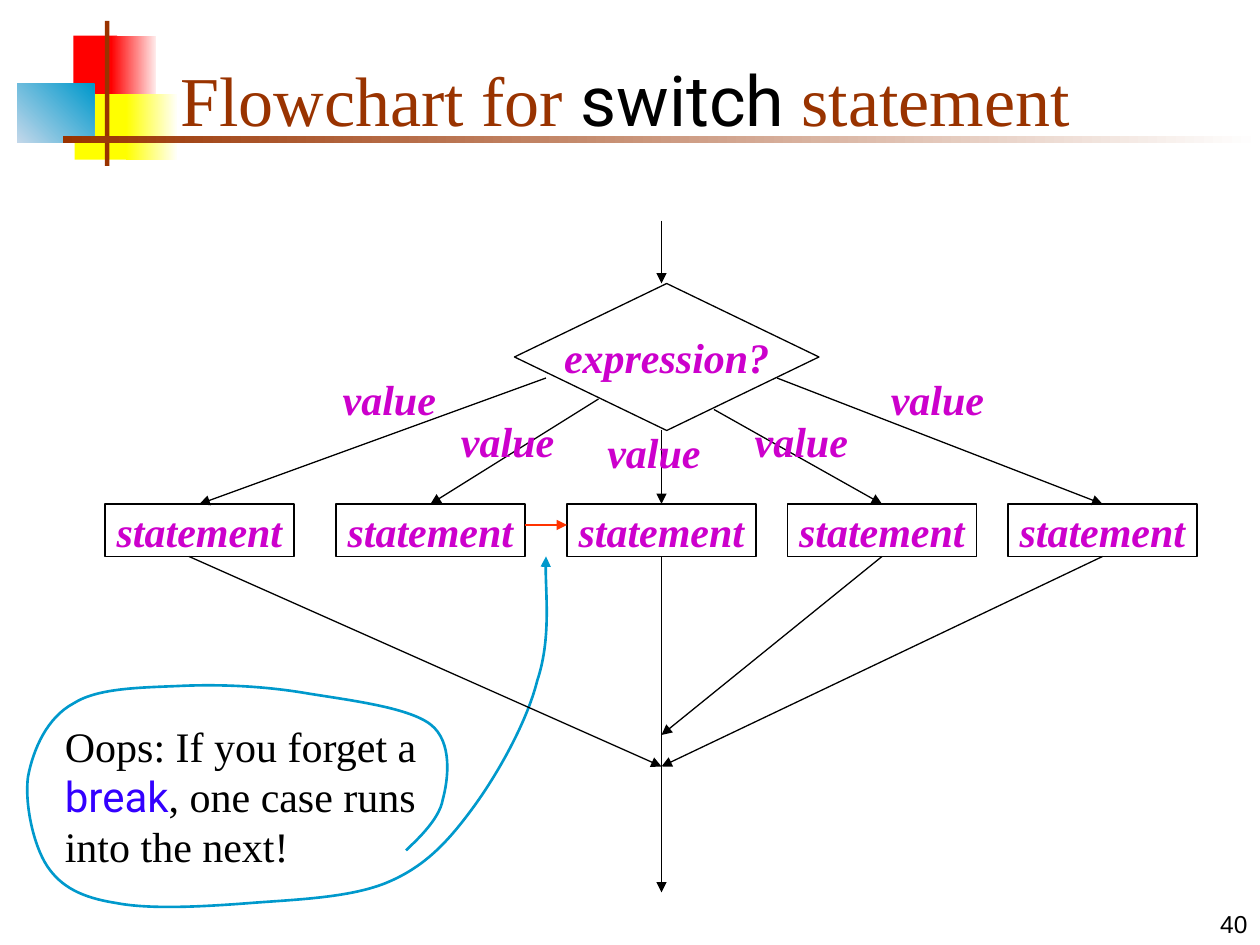
"""Build a slide with the flowchart of a switch statement."""
from dataclasses import dataclass

from lxml import etree
from pptx import Presentation
from pptx.dml.color import RGBColor
from pptx.enum import shapes, text
from pptx.oxml.ns import qn
from pptx.util import Pt


@dataclass(frozen=True)
class Theme:
    serif: str = "Times New Roman"
    code: str = "Roboto"
    sans: str = "Arial"
    title: str = "993300"
    ink: str = "000000"
    label: str = "CC00CC"
    keyword: str = "3300FF"
    fall_through: str = "FF3300"
    callout: str = "0099CC"
    title_size: int = 40
    body_size: int = 24
    number_size: int = 14
    thin: float = 0.75
    thick: float = 1.5


T = Theme()

TITLE = [("Flowchart for ", T.serif, T.title), ("switch", T.code, T.ink),
         (" statement", T.serif, T.title)]
WARNING = [("Oops: If you forget a ", T.serif, T.ink), ("break", T.code, T.keyword),
           (", one case runs into the next!", T.serif, T.ink)]
NUMBER = [("40", T.sans, T.ink)]
CONDITION, STATEMENT, VALUE = ([(word, T.serif, T.label)]
                               for word in ("expression?", "statement", "value"))

ORNAMENTS = [
    ((42, 20.3, 25, 37.5), ["FF0000"], 0),
    ((63.5, 20.3, 25.6, 37.5), ["FF0000", "FFEAEA"], 0),
    ((42.7, 53.8, 33, 37.5), ["FFFF00"], 0),
    ((72, 53.8, 29, 37.5), ["FFFF00", "FFFFF8"], 0),
    ((9.8, 48, 44, 33.5), ["C4D8EA", "0099CC"], 45),
    ((60, 12, 2.5, 82.8), [T.title], 0),
    ((36, 78, 684, 3.75), [T.title, "FFFFFF"], 0),
]

AXIS = 378
BOX_WIDTH, BOX_HEIGHT, BOX_TOP = 108, 30, 288
BOX_BOTTOM = BOX_TOP + BOX_HEIGHT
DIAMOND = (294, 162, 174, 84)
VALUE_WIDTH, VALUE_HEIGHT = 73.4, 36
CASES = [
    {"left": 60, "branch": (312, 216), "value": (185.8, 210)},
    {"left": 192, "branch": (342, 228), "value": (253.4, 234)},
    {"left": 324, "branch": (AXIS, 246), "value": (337, 240), "exit": 510},
    {"left": 450, "branch": (408, 234), "value": (421.2, 234), "exit": 420},
    {"left": 576, "branch": (444, 216), "value": (499, 210), "exit": 438},
]

LOOP_START = (232.5, 486.5)
LOOP_CURVES = [
    [(236.2, 481.7), (251.3, 469.4), (253.4, 457.2)],
    [(255.6, 445.7), (259.2, 424.1), (246.2, 414)],
    [(232.6, 403.9), (198, 399.6), (174.2, 396)],
    [(150.5, 392.4), (124.6, 391), (103, 392.4)],
    [(80.6, 393.1), (56.2, 393.1), (41.8, 401.8)],
    [(27.4, 410.4), (18.7, 428.4), (16.2, 443.5)],
    [(13.7, 459.4), (18.7, 483.1), (26.6, 494.6)],
    [(35.3, 506.9), (46.8, 512.6), (66.2, 516.2)],
    [(85.7, 519.8), (118.1, 517.7), (144, 516.2)],
    [(169.9, 514.1), (200.9, 512.6), (221.8, 504)],
    [(243.4, 495.4), (255.6, 481), (270, 462.2)],
    [(284.4, 442.8), (301, 412.6), (307.4, 388.8)],
    [(314.6, 365), (311, 332.6), (311.8, 318)],
]


def rgb(code):
    return RGBColor.from_string(code)


def points(values):
    return [Pt(value) for value in values]


def write(shape, runs, *, size=T.body_size, align="LEFT", anchor="TOP", wrap=True, strong=None):
    frame = shape.text_frame
    frame.auto_size = text.MSO_AUTO_SIZE.NONE
    frame.word_wrap = wrap
    frame.vertical_anchor = getattr(text.MSO_ANCHOR, anchor)
    paragraph = frame.paragraphs[0]
    paragraph.alignment = getattr(text.PP_ALIGN, align)
    for words, face, color in runs:
        run = paragraph.add_run()
        run.text = words
        font = run.font
        font.name, font.size, font.color.rgb = face, Pt(size), rgb(color)
        font.bold = font.italic = strong


def add_text(slide, box, runs, **style):
    write(slide.shapes.add_textbox(*points(box)), runs, **style)


def add_ornament(slide, box, colors, angle):
    ornament = slide.shapes.add_shape(shapes.MSO_SHAPE.RECTANGLE, *points(box))
    ornament.shadow.inherit = False
    ornament.line.fill.background()
    if len(colors) == 1:
        ornament.fill.solid()
        ornament.fill.fore_color.rgb = rgb(colors[0])
    else:
        ornament.fill.gradient()
        ornament.fill.gradient_angle = angle
        for stop, color in zip(ornament.fill.gradient_stops, colors):
            stop.color.rgb = rgb(color)


def outline(shape, color=T.ink, width=T.thin):
    shape.shadow.inherit = False
    shape.fill.background()
    shape.line.color.rgb = rgb(color)
    shape.line.width = Pt(width)


def add_node(slide, kind, box, runs):
    node = slide.shapes.add_shape(kind, *points(box))
    outline(node)
    write(node, runs, align="CENTER", anchor="MIDDLE", wrap=False, strong=True)
    return node


def add_arrowhead(line):
    etree.SubElement(line.get_or_add_ln(), qn("a:tailEnd"), type="triangle")


def add_arrow(slide, start, end, *, color=T.ink, source=None, target=None):
    arrow = slide.shapes.add_connector(shapes.MSO_CONNECTOR.STRAIGHT, *points(start + end))
    arrow.line.color.rgb = rgb(color)
    arrow.line.width = Pt(T.thin)
    add_arrowhead(arrow)
    etree.SubElement(arrow._element.spPr, qn("a:effectLst"))
    if source is not None:
        arrow.begin_connect(source, 2)
    if target is not None:
        arrow.end_connect(target, 0)


def add_loop(slide):
    builder = slide.shapes.build_freeform(*LOOP_START, scale=Pt(1))
    builder.add_line_segments([point for curve in LOOP_CURVES for point in curve], close=False)
    loop = builder.convert_to_shape()
    outline(loop, T.callout, T.thick)
    add_arrowhead(loop)
    for route in loop._element.iter(qn("a:path")):
        segments = route.findall(qn("a:lnTo"))
        for first in range(0, len(segments), 3):
            curve = etree.SubElement(route, qn("a:cubicBezTo"))
            for segment in segments[first:first + 3]:
                curve.append(segment[0])
                route.remove(segment)


def add_case(slide, case):
    left = case["left"]
    middle = left + BOX_WIDTH / 2
    box = add_node(slide, shapes.MSO_SHAPE.FLOWCHART_PROCESS,
                   (left, BOX_TOP, BOX_WIDTH, BOX_HEIGHT), STATEMENT)
    add_arrow(slide, case["branch"], (middle, BOX_TOP), target=box)
    if "exit" in case:
        add_arrow(slide, (middle, BOX_BOTTOM), (AXIS, case["exit"]), source=box)
    add_text(slide, case["value"] + (VALUE_WIDTH, VALUE_HEIGHT), VALUE,
             align="CENTER", strong=True)


def main():
    deck = Presentation()
    deck.slide_width, deck.slide_height = Pt(720), Pt(540)
    slide = deck.slides.add_slide(deck.slide_layouts[5])
    for ornament in ORNAMENTS:
        add_ornament(slide, *ornament)
    title = slide.shapes.title
    title.left, title.top, title.width, title.height = points((96, 18, 613.5, 66))
    write(title, TITLE, size=T.title_size, anchor="BOTTOM")
    slide.shapes._spTree.append(title._element)
    add_text(slide, (570, 504, 150, 36), NUMBER, size=T.number_size,
             align="RIGHT", anchor="BOTTOM")
    add_text(slide, (30, 408, 216, 93.6), WARNING)
    add_loop(slide)
    add_node(slide, shapes.MSO_SHAPE.FLOWCHART_DECISION, DIAMOND, CONDITION)
    add_arrow(slide, (AXIS, 126), (AXIS, 162))
    for case in CASES:
        add_case(slide, case)
    add_arrow(slide, (108, BOX_BOTTOM), (AXIS, 438))
    add_arrow(slide, (300, 300), (324, 300), color=T.fall_through)
    deck.save("out.pptx")


if __name__ == "__main__":
    main()
